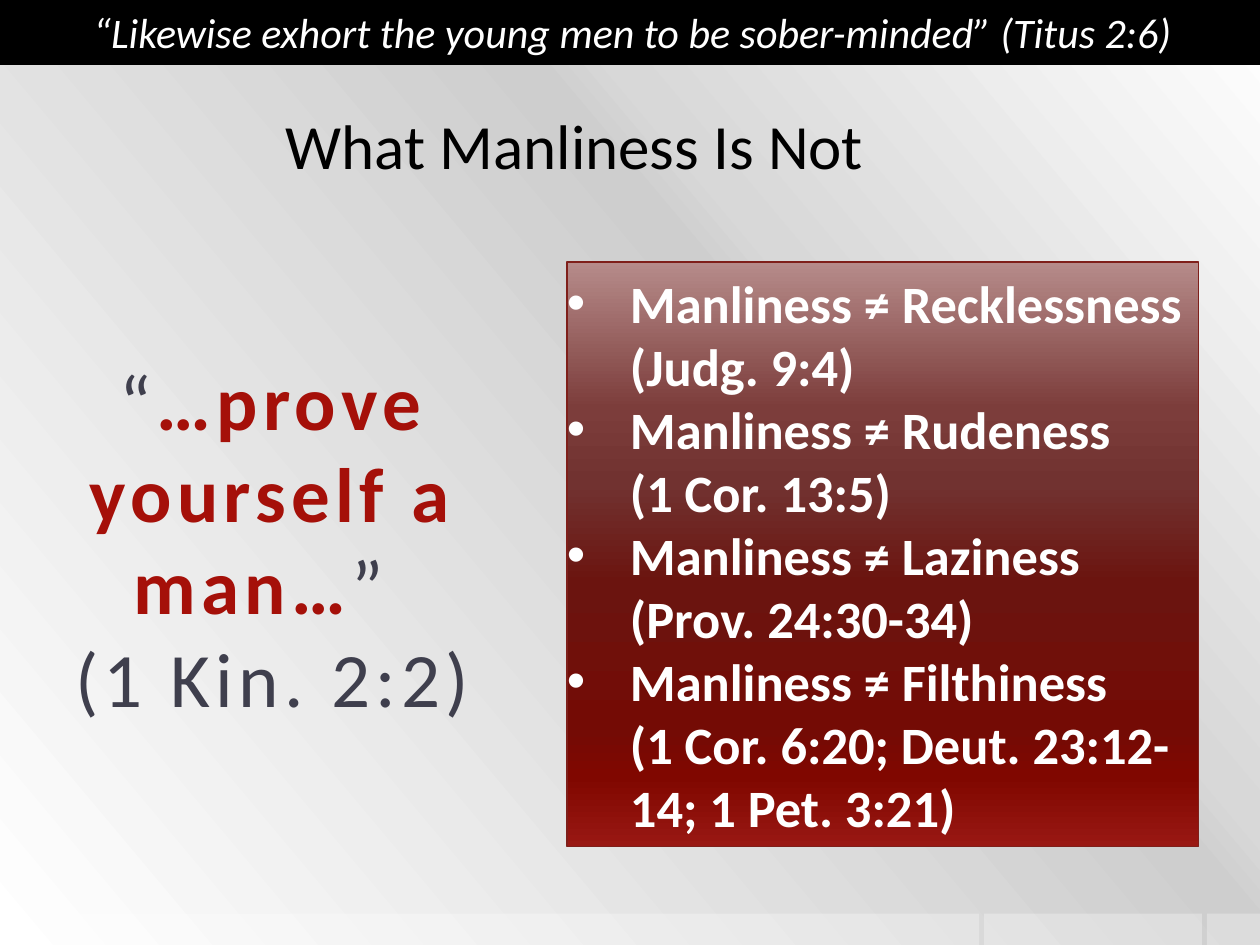
from lxml import etree
from pptx import Presentation
from pptx.dml.color import RGBColor
from pptx.enum import shapes, text
from pptx.oxml import ns
from pptx.util import Cm, Pt

HUES = {"white": "FFFFFF", "black": "000000", "slate": "3F3F4D",
        "red": "A51009", "edge": "7F1F1A"}
TITLE = "What Manliness Is Not"
VERSE = "“Likewise exhort the young men to be sober-minded” (Titus 2:6)"
QUOTE = [("“", "slate", False), ("…prove yourself a man…", "red", True),
         ("” \n(1 Kin. 2:2)", "slate", False)]
POINTS = [("Recklessness", "Judg. 9:4"), ("Rudeness", "1 Cor. 13:5"),
          ("Laziness", "Prov. 24:30-34"),
          ("Filthiness", "1 Cor. 6:20; Deut. 23:12-14; 1 Pet. 3:21")]
SHEEN = [(0, "FFFFFF"), (34, "D8D8D8"), (38, "CECECE"), (100, "FFFFFF")]
PANEL = [(0, "B68B8A"), (25, "7C3D3B"), (38, "713230"), (55, "6B140F"),
         (80, "740B05"), (88, "800700"), (100, "991813")]
WIDE, HIGH = 25.4, 19.05
STRIPS = [(0, 19.74), (19.84, 4.39), (24.33, 1.07)]
STRIP_H = 0.63


def rgb(name):
    return RGBColor.from_string(HUES[name])


def add(parent, tag, **attrs):
    return etree.SubElement(parent, ns.qn(tag), attrs)


def blend(shape, stops, angle):
    shape.fill.background()
    old = shape._element.spPr.find(ns.qn("a:noFill"))
    grad = etree.Element(ns.qn("a:gradFill"), rotWithShape="1")
    stack = add(grad, "a:gsLst")
    for place, hue in stops:
        stop = add(stack, "a:gs", pos=str(place * 1000))
        add(stop, "a:srgbClr", val=hue)
    add(grad, "a:lin", ang=str(angle * 60000), scaled="0")
    old.getparent().replace(old, grad)


def block(left, top, width, height, fill=None, line=None, weight=1):
    box = slide.shapes.add_shape(shapes.MSO_SHAPE.RECTANGLE,
                                 Cm(left), Cm(top), Cm(width), Cm(height))
    box.shadow.inherit = False
    if fill:
        box.fill.solid()
        box.fill.fore_color.rgb = rgb(fill)
    if line:
        box.line.color.rgb = rgb(line)
        box.line.width = Pt(weight)
    else:
        box.line.fill.background()
    return box


def frame(box, side=0.25, wrap=True, anchor=text.MSO_ANCHOR.TOP):
    body = box.text_frame
    body.word_wrap = wrap
    body.margin_left = body.margin_right = Cm(side)
    body.margin_top = body.margin_bottom = Cm(0.13)
    body.vertical_anchor = anchor
    return body


def write(para, words, size=24, hue="white", bold=False, slant=False,
          gap=0, align=text.PP_ALIGN.LEFT):
    para.alignment = align
    for count, part in enumerate(words.split("\n")):
        if count:
            para.add_line_break()
        run = para.add_run()
        run.text = part
        font = run.font
        font.name, font.size = "Calibri", Pt(size)
        font.bold, font.italic = bold, slant
        font.color.rgb = rgb(hue)
        if gap:
            run._r.get_or_add_rPr().set("spc", str(gap * 100))


deck = Presentation()
deck.slide_width, deck.slide_height = Cm(WIDE), Cm(HIGH)
slide = deck.slides.add_slide(deck.slide_layouts[5])
MID = text.PP_ALIGN.CENTER

blend(block(0, 0, WIDE, HIGH), SHEEN, 140)
for left, width in STRIPS:
    strip = block(left, HIGH - STRIP_H, width, STRIP_H, "white")
    tint = strip._element.spPr.find(ns.qn("a:solidFill"))[0]
    add(tint, "a:alpha", val="30000")

quote = slide.shapes.add_textbox(Cm(1.27), Cm(6.99), Cm(8.46), Cm(11.23))
para = frame(quote, 0).paragraphs[0]
para.space_after = Pt(6)
for words, hue, bold in QUOTE:
    write(para, words, size=44, hue=hue, bold=bold, gap=3, align=MID)

bar = block(0, 0, 25.5, 1.27, "black", "black", 2)
para = frame(bar, anchor=text.MSO_ANCHOR.MIDDLE).paragraphs[0]
write(para, VERSE, slant=True, align=MID)

panel = block(11.43, 5.28, 12.73, 11.79, line="edge", weight=0.75)
blend(panel, PANEL, 90)
body = frame(panel, 0, anchor=text.MSO_ANCHOR.MIDDLE)
for index, (vice, verse) in enumerate(POINTS):
    para = body.add_paragraph() if index else body.paragraphs[0]
    props = para._p.get_or_add_pPr()
    props.set("marL", str(Cm(1.27)))
    props.set("indent", str(-Cm(1.27)))
    add(props, "a:buFont", typeface="Arial")
    add(props, "a:buChar", char="•")
    write(para, f"Manliness ≠ {vice}\n({verse})", size=30, bold=True)

title = slide.shapes.title
title.left, title.top = Cm(5.51), Cm(2.01)
title.width, title.height = Cm(14.15), Cm(1.8)
write(frame(title, wrap=False).paragraphs[0], TITLE, size=36, hue="black")
slide.shapes._spTree.append(title._element)

deck.save("out.pptx")
